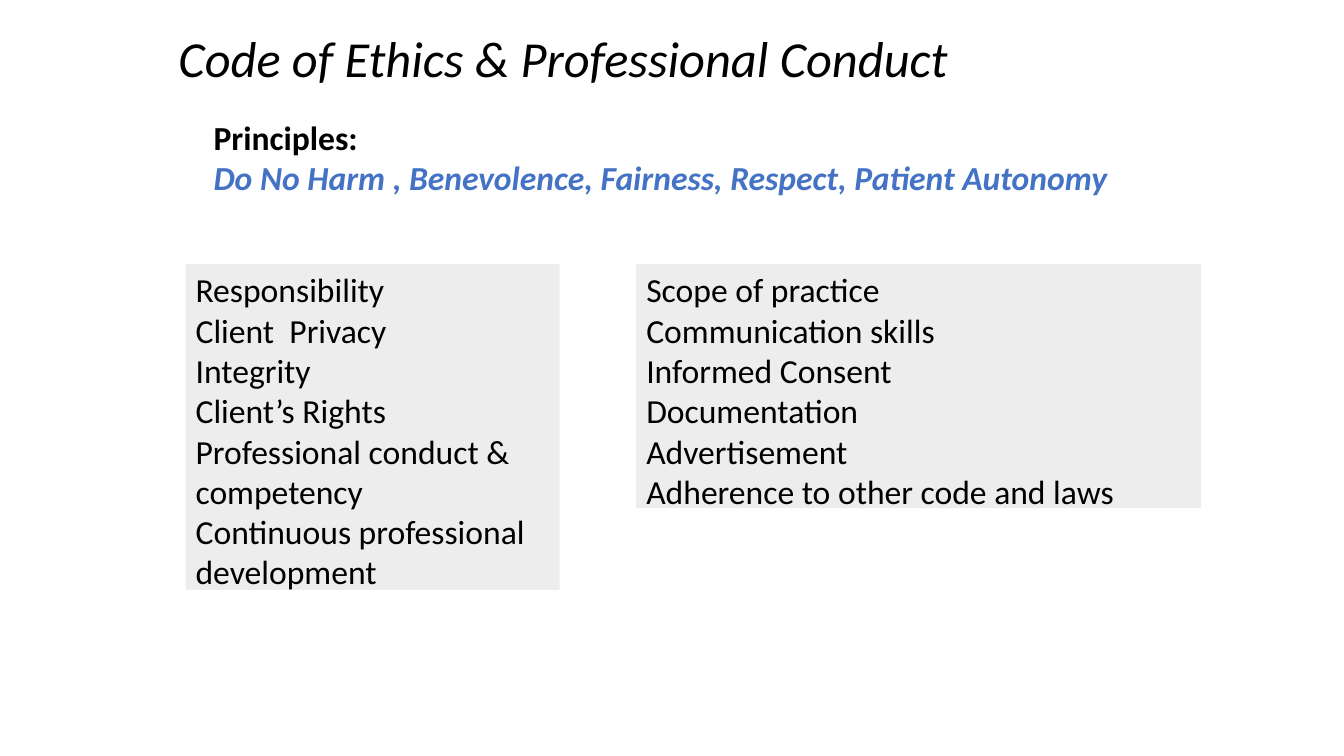
from dataclasses import dataclass

from lxml.etree import SubElement
from pptx import Presentation
from pptx.dml.color import RGBColor
from pptx.enum.text import MSO_ANCHOR, MSO_AUTO_SIZE, PP_ALIGN
from pptx.oxml.ns import qn
from pptx.util import Inches, Pt

FONT = "Calibri"
BLACK, WHITE, BLUE, GREY = "000000", "FFFFFF", "4472C4", "EDEDED"


@dataclass(frozen=True)
class Panel:
    left: float
    width: float
    height: float
    topics: tuple[str, ...]


PANEL_TOP = 2.62
PANELS = (
    Panel(1.84, 3.71, 3.33, (
        "Responsibility",
        "Client  Privacy",
        "Integrity",
        "Client’s Rights",
        "Professional conduct & competency",
        "Continuous professional development",
    )),
    Panel(6.31, 5.6, 2.52, (
        "Scope of practice",
        "Communication skills",
        "Informed Consent",
        "Documentation",
        "Advertisement",
        "Adherence to other code and laws",
    )),
)


def rgb(color: str) -> RGBColor:
    return RGBColor.from_string(color)


def place(shape, left: float, top: float, width: float, height: float) -> None:
    shape.left, shape.top = Inches(left), Inches(top)
    shape.width, shape.height = Inches(width), Inches(height)


def prepare(shape, *, fill: str | None = None, anchor=MSO_ANCHOR.TOP,
            auto_size=MSO_AUTO_SIZE.SHAPE_TO_FIT_TEXT) -> None:
    """Set the fill and the way text sits in the shape."""
    if fill:
        shape.fill.solid()
        shape.fill.fore_color.rgb = rgb(fill)
    frame = shape.text_frame
    frame.word_wrap = True
    frame.auto_size = auto_size
    frame.vertical_anchor = anchor


def write(paragraph, text: str, *, size: float = 24, color: str = BLACK,
          bold: bool = False, italic: bool = False,
          line_spacing: float = 1.0) -> None:
    """Fill a paragraph with one flush-left, unbulleted run."""
    properties = paragraph._p.get_or_add_pPr()
    properties.set("marL", "0")
    properties.set("indent", "0")
    SubElement(properties, qn("a:buNone"))
    paragraph.alignment = PP_ALIGN.LEFT
    paragraph.line_spacing = line_spacing
    paragraph.space_before = Pt(0)
    run = paragraph.add_run()
    run.text = text
    font = run.font
    font.name, font.size = FONT, Pt(size)
    font.bold, font.italic = bold, italic
    font.color.rgb = rgb(color)


def fill_panel(placeholder, panel: Panel) -> None:
    place(placeholder, panel.left, PANEL_TOP, panel.width, panel.height)
    prepare(placeholder, fill=GREY)
    frame = placeholder.text_frame
    for index, topic in enumerate(panel.topics):
        write(frame.add_paragraph() if index else frame.paragraphs[0], topic)


def main() -> None:
    deck = Presentation()
    deck.slide_width, deck.slide_height = Inches(13.33), Inches(7.5)
    slide = deck.slides.add_slide(deck.slide_layouts.get_by_name("Two Content"))
    title, *bodies = slide.placeholders

    place(title, 1.67, 0.06, 8.62, 1.09)
    prepare(title, anchor=MSO_ANCHOR.MIDDLE, auto_size=MSO_AUTO_SIZE.NONE)
    write(title.text_frame.paragraphs[0], "Code of Ethics & Professional Conduct",
          size=36, italic=True, line_spacing=0.9)

    principles = slide.shapes.add_textbox(
        Inches(2.02), Inches(1.11), Inches(9.37), Inches(1.21))
    prepare(principles, fill=WHITE, auto_size=MSO_AUTO_SIZE.NONE)
    write(principles.text_frame.paragraphs[0], "Principles:", bold=True)
    write(principles.text_frame.add_paragraph(),
          "Do No Harm , Benevolence, Fairness, Respect, Patient Autonomy",
          color=BLUE, bold=True, italic=True)

    for body, panel in zip(bodies, PANELS):
        fill_panel(body, panel)

    deck.save("out.pptx")


if __name__ == "__main__":
    main()
